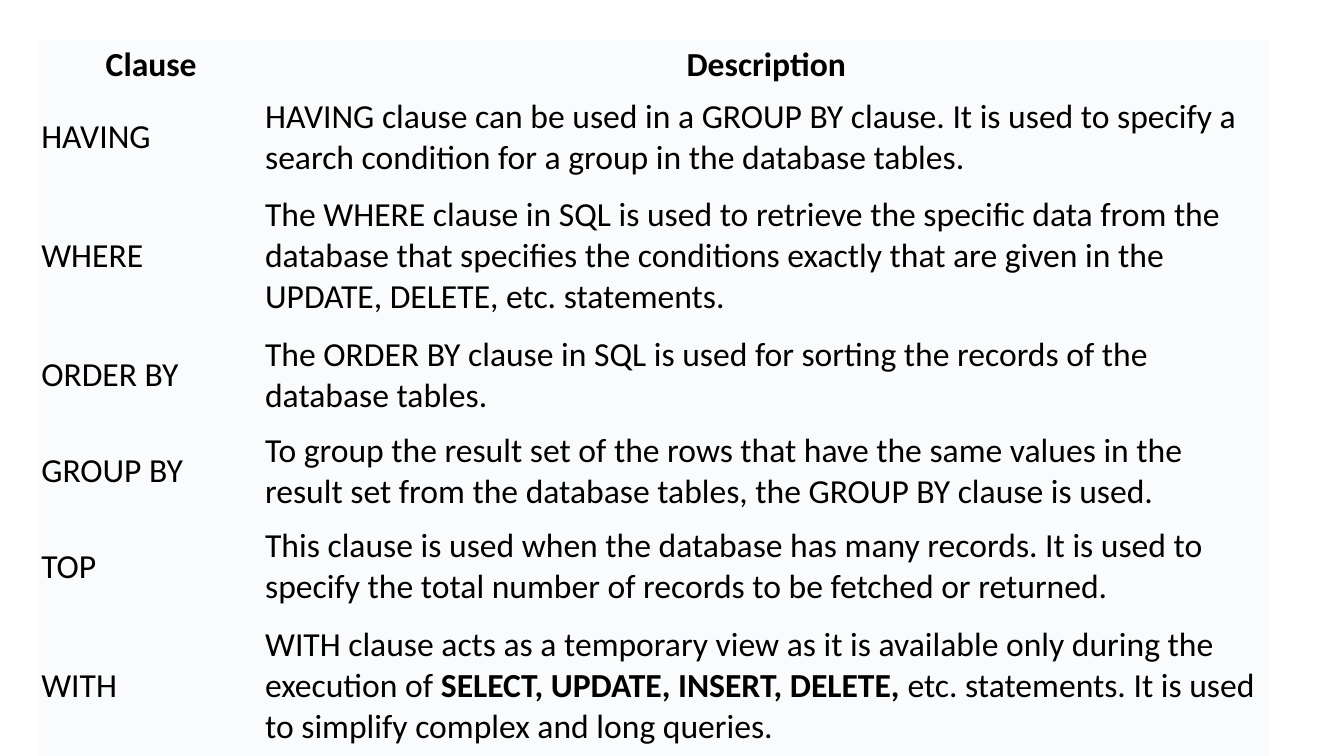
import pptx
import pptx.util
import pptx.dml.color
import pptx.enum.text
from dataclasses import dataclass

HEAD = ("Clause", "Description", 1)
ROWS = [
    ("HAVING", "HAVING clause can be used in a GROUP BY clause. It is used to specify a search condition for a group in the database tables.", 2),
    ("WHERE", "The WHERE clause in SQL is used to retrieve the specific data from the database that specifies the conditions exactly that are given in the UPDATE, DELETE, etc. statements.", 3),
    ("ORDER BY", "The ORDER BY clause in SQL is used for sorting the records of the database tables.", 2),
    ("GROUP BY", "To group the result set of the rows that have the same values in the result set from the database tables, the GROUP BY clause is used.", 2),
    ("TOP", "This clause is used when the database has many records. It is used to specify the total number of records to be fetched or returned.", 2),
    ("WITH", "WITH clause acts as a temporary view as it is available only during the execution of **SELECT, UPDATE, INSERT, DELETE,** etc. statements. It is used to simplify complex and long queries.", 3),
]
SIZE = (13.33, 7.5)
LEFT, TOP = 0.39, 0.4
COLS = (2.22, 9.98)
LINE, PAD = 0.46, 0.03
PLAIN = "{2D5ABB26-0587-4C30-8999-92F81FD0307C}"


@dataclass
class Theme:
    font: str = "Calibri"
    size: int = 24
    ink: str = "000000"
    fill: str = "FAFBFC"


theme = Theme()
inch = pptx.util.Inches
color = pptx.dml.color.RGBColor.from_string


def fill_cell(cell, text, head):
    cell.fill.solid()
    cell.fill.fore_color.rgb = color(theme.fill)
    cell.vertical_anchor = pptx.enum.text.MSO_ANCHOR.MIDDLE
    cell.margin_left = cell.margin_right = inch(0.02)
    cell.margin_top = cell.margin_bottom = inch(0.01)
    para = cell.text_frame.paragraphs[0]
    align = pptx.enum.text.PP_ALIGN
    para.alignment = align.CENTER if head else align.LEFT
    for i, part in enumerate(text.split("**")):
        run = para.add_run()
        run.text = part
        run.font.name = theme.font
        run.font.size = pptx.util.Pt(theme.size)
        run.font.color.rgb = color(theme.ink)
        run.font.bold = head or i % 2 == 1


def main():
    deck = pptx.Presentation()
    deck.slide_width, deck.slide_height = map(inch, SIZE)
    slide = deck.slides.add_slide(deck.slide_layouts[6])
    rows = [HEAD] + ROWS
    highs = [PAD + LINE * lines for _, _, lines in rows]
    frame = slide.shapes.add_table(
        len(rows), len(COLS), inch(LEFT), inch(TOP), inch(sum(COLS)), inch(sum(highs)))
    table = frame.table
    table.horz_banding = False
    table._tbl.tblPr.find(pptx.oxml.ns.qn("a:tableStyleId")).text = PLAIN
    for col, wide in zip(table.columns, COLS):
        col.width = inch(wide)
    for r, (row, high) in enumerate(zip(rows, highs)):
        table.rows[r].height = inch(high)
        for c, text in enumerate(row[:2]):
            fill_cell(table.cell(r, c), text, r == 0)
    deck.save("out.pptx")


if __name__ == "__main__":
    main()
